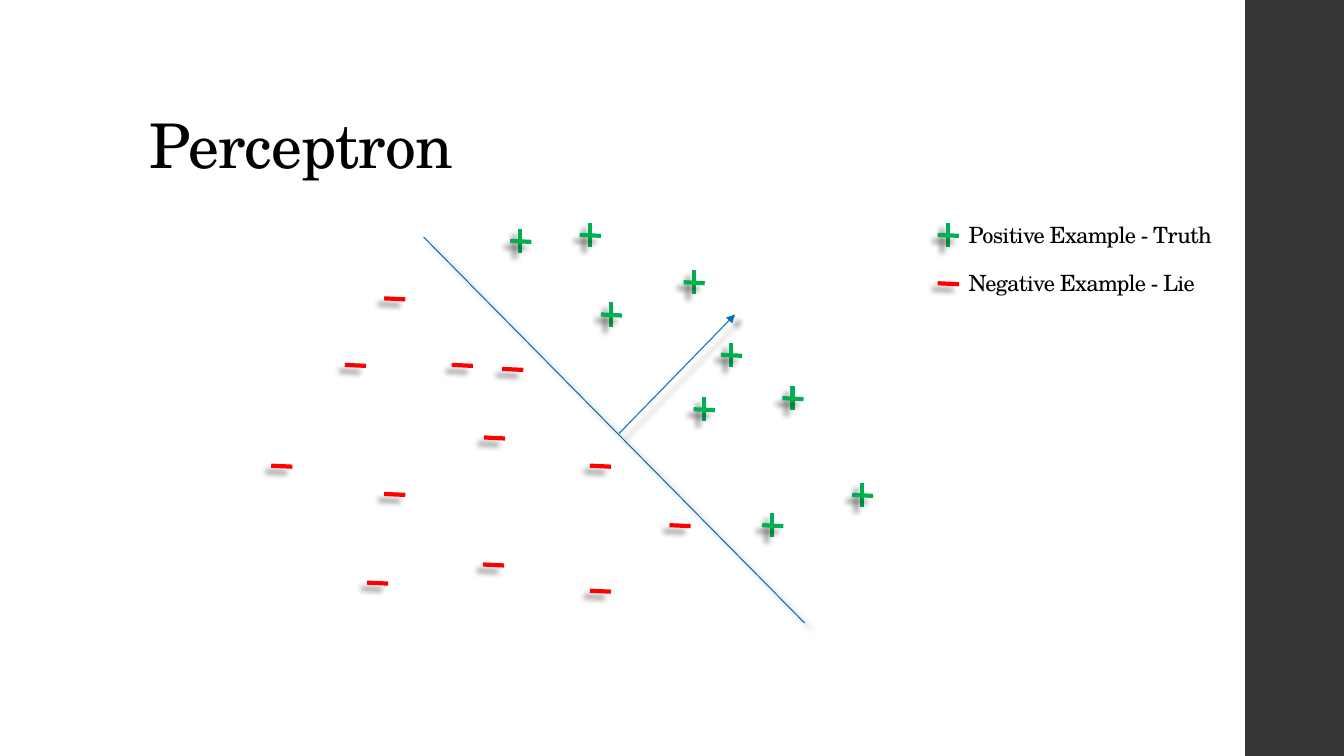
from lxml.etree import SubElement
from pptx import Presentation
from pptx.dml.color import RGBColor
from pptx.enum.shapes import MSO_CONNECTOR, MSO_SHAPE
from pptx.enum.text import MSO_ANCHOR, PP_ALIGN
from pptx.oxml.ns import qn
from pptx.util import Emu, Pt

EMU_PER_PX = 9144
COLORS = {
    "band": "353537",
    "text": "000000",
    "boundary": "0070C0",
    "positive": "00B050",
    "negative": "FF0000",
    "shadow": "000000",
}
FONT = "TeX Gyre Schola"

POSITIVE_CENTERS = [
    (585, 233), (516, 239), (606, 312), (786, 395), (698, 406),
    (766, 521), (725, 352), (688, 280), (855, 491),
]
NEGATIVE_CENTERS = [
    (391, 296), (352, 362), (391, 490), (279, 462), (458, 362), (508, 366),
    (490, 434), (674, 521), (374, 578), (595, 462), (489, 560), (595, 586),
]


def px(length):
    return Emu(length * EMU_PER_PX)


def rgb(color):
    return RGBColor.from_string(COLORS[color])


class SlideBuilder:
    def __init__(self, slide):
        self.slide = slide

    def band(self, left, top, width, height):
        band = self.slide.shapes.add_shape(
            MSO_SHAPE.RECTANGLE, px(left), px(top), px(width), px(height))
        band.shadow.inherit = False
        band.fill.solid()
        band.fill.fore_color.rgb = rgb("band")
        band.line.fill.background()

    def set_wording(self, frame, wording, size):
        frame.text = wording
        frame.word_wrap = True
        frame.vertical_anchor = MSO_ANCHOR.BOTTOM
        paragraph = frame.paragraphs[0]
        paragraph.alignment = PP_ALIGN.LEFT
        paragraph.line_spacing = 0.9
        run = paragraph.runs[0]
        run.font.name = FONT
        run.font.size = Pt(size)
        run.font.color.rgb = rgb("text")
        run._r.get_or_add_rPr().set("spc", "-50")

    def title(self, wording, left, top, width, height):
        title = self.slide.shapes.title
        title.left, title.top = px(left), px(top)
        title.width, title.height = px(width), px(height)
        self.set_wording(title.text_frame, wording, 44)

    def label(self, wording, left, top, width, height):
        label = self.slide.shapes.add_textbox(
            px(left), px(top), px(width), px(height))
        self.set_wording(label.text_frame, wording, 16)

    def line(self, start, end, color, weight, shadow_angle, arrow=False):
        line = self.slide.shapes.add_connector(
            MSO_CONNECTOR.STRAIGHT, *map(px, start + end))
        line.line.color.rgb = rgb(color)
        line.line.width = Pt(weight)
        properties = line._element.spPr
        if arrow:
            SubElement(properties.get_or_add_ln(), qn("a:tailEnd"), type="triangle")
        effects = SubElement(properties, qn("a:effectLst"))
        shadow = SubElement(
            effects, qn("a:outerShdw"), blurRad=str(Pt(4)), dist=str(Pt(6)),
            dir=str(shadow_angle * 60000), algn="tl", rotWithShape="0")
        shade = SubElement(shadow, qn("a:srgbClr"), val=COLORS["shadow"])
        SubElement(shade, qn("a:alpha"), val="40000")

    def minus(self, x, y, color="negative"):
        self.line((x - 10, y), (x + 11, y + 1), color, 3, 135)

    def plus(self, x, y):
        self.line((x, y - 12), (x, y + 12), "positive", 3, 135)
        self.minus(x, y, "positive")


def main():
    presentation = Presentation()
    presentation.slide_width, presentation.slide_height = px(1333), px(750)
    builder = SlideBuilder(
        presentation.slides.add_slide(presentation.slide_layouts[5]))

    builder.band(1235, 0, 98, 750)
    builder.title("Perceptron", 138, 40, 1060, 145)

    builder.line((420, 235), (798, 618), "boundary", 0.75, 45)
    builder.line((614, 430), (729, 312), "boundary", 0.75, 45, arrow=True)

    for center in POSITIVE_CENTERS:
        builder.plus(*center)
    for center in NEGATIVE_CENTERS:
        builder.minus(*center)

    legend = [
        (builder.plus, 233, "Positive Example - Truth"),
        (builder.minus, 281, "Negative Example - Lie"),
    ]
    for mark, center_y, meaning in legend:
        mark(940, center_y)
        builder.label(meaning, 951, center_y - 48, 280, 66)

    presentation.save("out.pptx")


if __name__ == "__main__":
    main()
